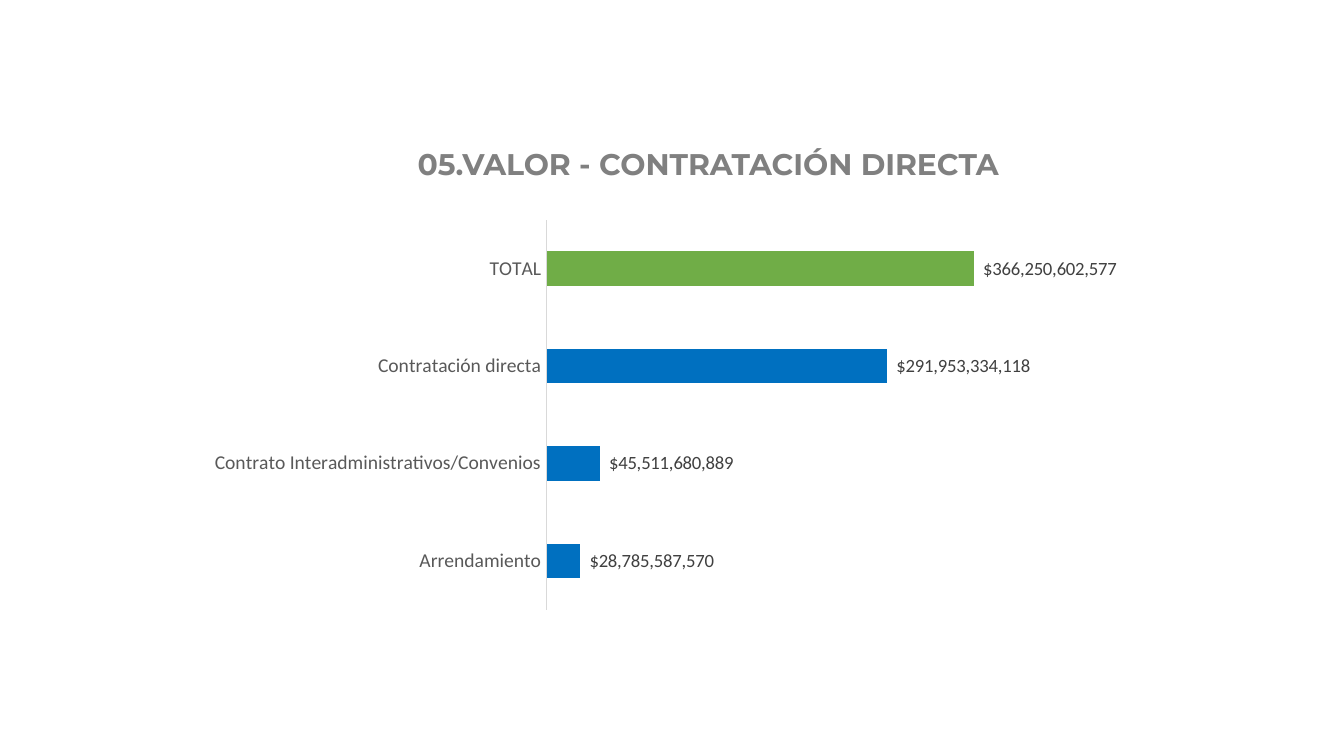
from lxml import etree
from pptx import Presentation
from pptx.chart.data import CategoryChartData
from pptx.dml.color import RGBColor
from pptx.enum.chart import XL_CHART_TYPE, XL_LABEL_POSITION, XL_TICK_MARK
from pptx.enum.text import MSO_ANCHOR, PP_ALIGN
from pptx.oxml.ns import qn
from pptx.util import Pt

BLUE = RGBColor(0x00, 0x70, 0xC0)
GREEN = RGBColor(0x70, 0xAD, 0x47)
TITLE_GRAY = RGBColor(0x80, 0x80, 0x80)
CATEGORY_GRAY = RGBColor(0x59, 0x59, 0x59)
LABEL_GRAY = RGBColor(0x40, 0x40, 0x40)
AXIS_GRAY = RGBColor(0xD9, 0xD9, 0xD9)

TITLE = "05.VALOR - CONTRATACIÓN DIRECTA"
CONTRACTS = [
    ("Arrendamiento", 28785587570),
    ("Contrato Interadministrativos/Convenios", 45511680889),
    ("Contratación directa", 291953334118),
    ("TOTAL", 366250602577),
]
AXIS_MAX = 400_000_000_000
CURRENCY = '_("$"* #,##0_)'

SLIDE_SIZE = (1344, 756)
TITLE_BOX = (409, 130, 599, 71)
CHART_BOX = (211, 206, 922, 415)
PLOT_AREA = {"x": 0.364, "y": 0.034, "w": 0.506, "h": 0.939}


def px(length):
    return round(length * 9144000 / SLIDE_SIZE[0])


def set_font(font, size, color, name="Calibri", bold=False):
    font.size = Pt(size)
    font.name = name
    font.bold = bold
    font.color.rgb = color


def add_title(slide):
    box = slide.shapes.add_textbox(*map(px, TITLE_BOX))
    frame = box.text_frame
    frame.word_wrap = True
    frame.vertical_anchor = MSO_ANCHOR.MIDDLE
    frame.margin_left = frame.margin_right = px(8)
    frame.margin_top = frame.margin_bottom = px(4)
    paragraph = frame.paragraphs[0]
    paragraph.alignment = PP_ALIGN.CENTER
    paragraph.line_spacing = 0.9
    run = paragraph.add_run()
    run.text = TITLE
    set_font(run.font, 16, TITLE_GRAY, "Montserrat", True)


def place_plot(chart):
    """Fix the inner plot area as fractions of the chart."""
    plot_area = chart.element.find(".//" + qn("c:plotArea"))
    for old_layout in plot_area.findall(qn("c:layout")):
        plot_area.remove(old_layout)
    layout = etree.Element(qn("c:layout"))
    plot_area.insert(0, layout)
    manual = etree.SubElement(layout, qn("c:manualLayout"))
    settings = {"layoutTarget": "inner", "xMode": "edge", "yMode": "edge", **PLOT_AREA}
    for tag, value in settings.items():
        etree.SubElement(manual, qn(f"c:{tag}")).set("val", str(value))


def add_contract_chart(slide):
    data = CategoryChartData(number_format=CURRENCY)
    data.categories = [name for name, _ in CONTRACTS]
    data.add_series("Valor", [value for _, value in CONTRACTS])
    chart = slide.shapes.add_chart(
        XL_CHART_TYPE.BAR_CLUSTERED, *map(px, CHART_BOX), data
    ).chart
    chart.has_title = False
    chart.has_legend = False
    set_font(chart.font, 10, LABEL_GRAY)
    place_plot(chart)

    categories = chart.category_axis
    categories.major_tick_mark = categories.minor_tick_mark = XL_TICK_MARK.NONE
    categories.format.line.color.rgb = AXIS_GRAY
    categories.format.line.width = Pt(0.75)
    set_font(categories.tick_labels.font, 10.5, CATEGORY_GRAY)

    values = chart.value_axis
    values.minimum_scale = 0
    values.maximum_scale = AXIS_MAX
    values.has_major_gridlines = False
    values.visible = False

    plot = chart.plots[0]
    plot.gap_width = 182
    plot.vary_by_categories = False
    bars = plot.series[0]
    bars.invert_if_negative = False
    for part, color in (bars, BLUE), (bars.points[len(CONTRACTS) - 1], GREEN):
        part.format.fill.solid()
        part.format.fill.fore_color.rgb = color

    labels = bars.data_labels
    labels.show_value = True
    labels.position = XL_LABEL_POSITION.OUTSIDE_END
    labels.number_format = CURRENCY
    labels.number_format_is_linked = False
    set_font(labels.font, 10, LABEL_GRAY)


def main():
    deck = Presentation()
    deck.slide_width, deck.slide_height = map(px, SLIDE_SIZE)
    slide = deck.slides.add_slide(deck.slide_layouts[6])
    add_title(slide)
    add_contract_chart(slide)
    deck.save("out.pptx")


if __name__ == "__main__":
    main()
